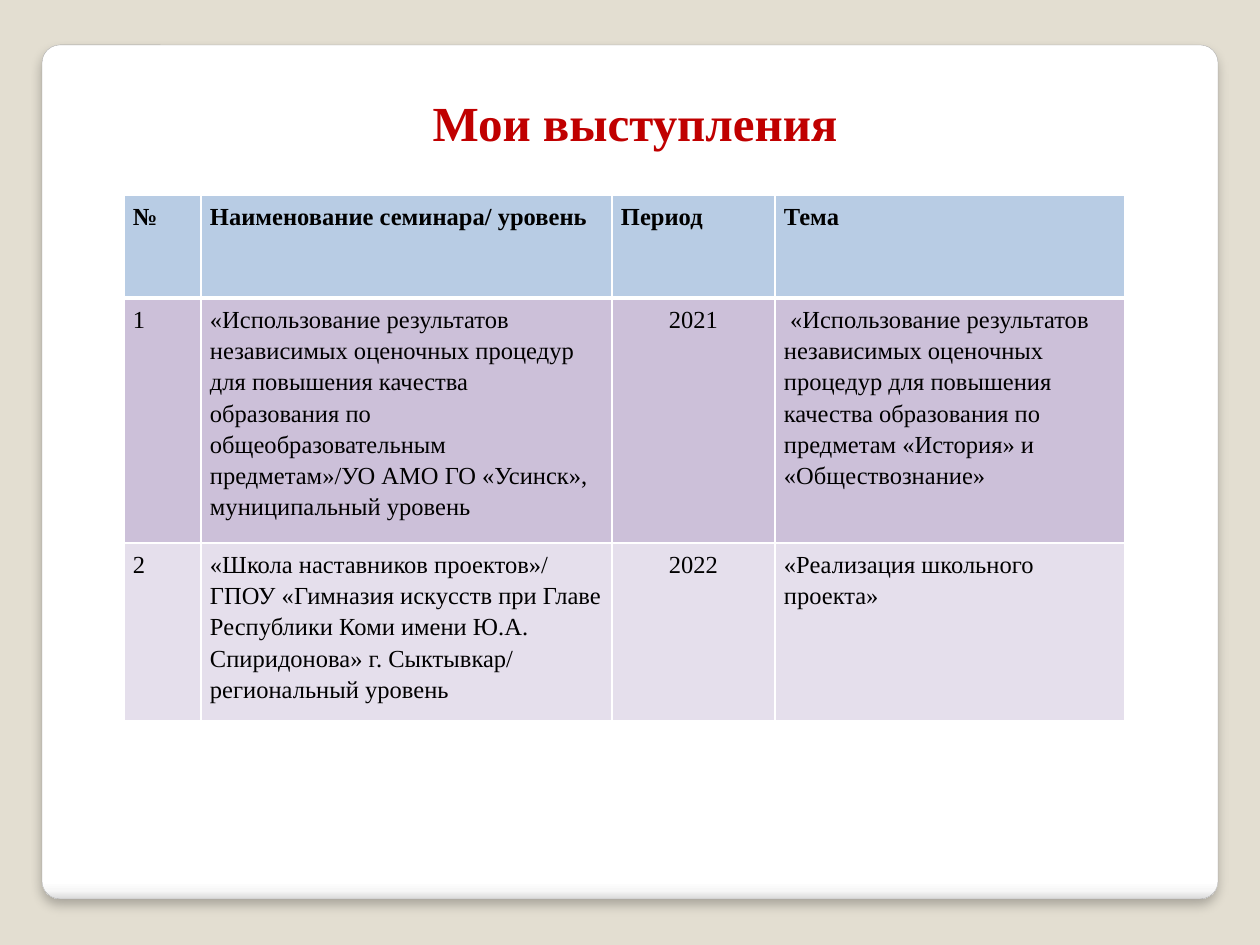
from lxml import etree
from pptx import Presentation
from pptx.dml.color import RGBColor
from pptx.enum.shapes import MSO_SHAPE
from pptx.enum.text import MSO_ANCHOR, PP_ALIGN
from pptx.oxml.ns import qn
from pptx.util import Emu, Pt

ROUND = MSO_SHAPE.ROUNDED_RECTANGLE
TOP = MSO_ANCHOR.TOP
LEFT, MID = PP_ALIGN.LEFT, PP_ALIGN.CENTER
FACE = "Times New Roman"
HEX = {
    "back": "E3DED1", "edge": "A4A4A4", "title": "C00000", "text": "000000",
    "rule": "FFFFFF", "head": "B8CCE4", "odd": "CCC0D9", "even": "E5DFEC",
}
STOPS = [(0, "FFFFFF"), (98, "FFFFFF"), (99, "F7F7F7"), (100, "DADADA")]
COLS = [77, 411, 163, 350]
TALL = [103, 245, 178]
FILLS = ["head", "odd", "even"]
ROWS = [
    ["№", "Наименование семинара/ уровень", "Период", "Тема"],
    ["1",
     "«Использование результатов независимых оценочных процедур для повышения "
     "качества образования по общеобразовательным предметам»/УО АМО ГО «Усинск», "
     "муниципальный уровень",
     "2021",
     " «Использование результатов независимых оценочных процедур для повышения "
     "качества образования по предметам «История» и «Обществознание»"],
    ["2",
     "«Школа наставников проектов»/ ГПОУ «Гимназия искусств при Главе Республики "
     "Коми имени Ю.А. Спиридонова» г. Сыктывкар/ региональный уровень",
     "2022",
     "«Реализация школьного проекта»"],
]


def px(num):
    """Turn px into EMU."""
    return Emu(round(num * 914400 / 126))


def tint(name):
    """Return the named colour."""
    return RGBColor.from_string(HEX[name])


def put(item, vals):
    """Set attributes from a dict."""
    for key, val in vals.items():
        setattr(item, key, val)


def node(root, tag, **vals):
    """Add an XML child with attributes."""
    return etree.SubElement(root, qn(tag), {key: str(val) for key, val in vals.items()})


def write(frame, text, size, bold, color, form):
    """Write one formatted paragraph."""
    para = frame.paragraphs[0]
    put(para, form)
    run = para.add_run()
    run.text = text
    put(run.font, {"name": FACE, "size": Pt(size), "bold": bold})
    run.font.color.rgb = tint(color)


def add_card(slide):
    """Add the rounded card behind the content."""
    card = slide.shapes.add_shape(ROUND, px(42), px(45), px(1176), px(854))
    card.adjustments[0] = 0.021
    card.fill.gradient()
    card.fill.gradient_angle = 270
    props = card._element.spPr
    stops = props.find(".//" + qn("a:gsLst"))
    stops.clear()
    for pos, color in STOPS:
        node(node(stops, "a:gs", pos=pos * 1000), "a:srgbClr", val=color)
    card.line.color.rgb = tint("edge")
    card.line.width = Pt(0.16)
    card.shadow.inherit = False
    shade = node(props.find(qn("a:effectLst")), "a:outerShdw", blurRad=Pt(6),
                 dist=Pt(4), dir=5400000, algn="tl", rotWithShape=0)
    node(node(shade, "a:srgbClr", val="000000"), "a:alpha", val=25000)
    slide.shapes._spTree.insert(2, card._element)


def add_title(slide):
    """Place and format the title."""
    title = slide.shapes.title
    put(title, {"left": px(124), "top": px(82), "width": px(1022), "height": px(149)})
    frame = title.text_frame
    put(frame, {"vertical_anchor": TOP, "word_wrap": True, "margin_top": px(10)})
    write(frame, "Мои выступления", 28, True, "title", {"alignment": MID})


def add_rules(cell, row):
    """Draw the cell borders, thick below the head row."""
    props = cell._tc.get_or_add_tcPr()
    thick = {0: "B", 1: "T"}.get(row)
    for side in "LRTB":
        line = node(props, "a:ln" + side, w=Pt(3 if side == thick else 1))
        node(node(line, "a:solidFill"), "a:srgbClr", val=HEX["rule"])


def add_cell(cell, text, row, col):
    """Fill and format one cell."""
    put(cell, {"margin_left": px(9), "margin_right": px(9),
               "margin_top": px(5), "margin_bottom": px(5)})
    add_rules(cell, row)
    cell.fill.solid()
    cell.fill.fore_color.rgb = tint(FILLS[row])
    form = {"line_spacing": 1.15,
            "alignment": MID if row and col == 2 else LEFT,
            "space_after": Pt(10 if row and col else 0)}
    write(cell.text_frame, text, 14, row == 0, "text", form)


def add_grid(slide):
    """Add the table of talks."""
    grid = slide.shapes.add_table(len(ROWS), len(COLS), px(124), px(195),
                                  px(sum(COLS)), px(sum(TALL))).table
    for col, wide in zip(grid.columns, COLS):
        col.width = px(wide)
    for row, tall in zip(grid.rows, TALL):
        row.height = px(tall)
    for row, texts in enumerate(ROWS):
        for col, text in enumerate(texts):
            add_cell(grid.cell(row, col), text, row, col)


def main():
    """Build and save the slide."""
    deck = Presentation()
    put(deck, {"slide_width": px(1260), "slide_height": px(945)})
    slide = deck.slides.add_slide(deck.slide_layouts[5])
    slide.background.fill.solid()
    slide.background.fill.fore_color.rgb = tint("back")
    add_card(slide)
    add_title(slide)
    add_grid(slide)
    deck.save("out.pptx")


if __name__ == "__main__":
    main()
